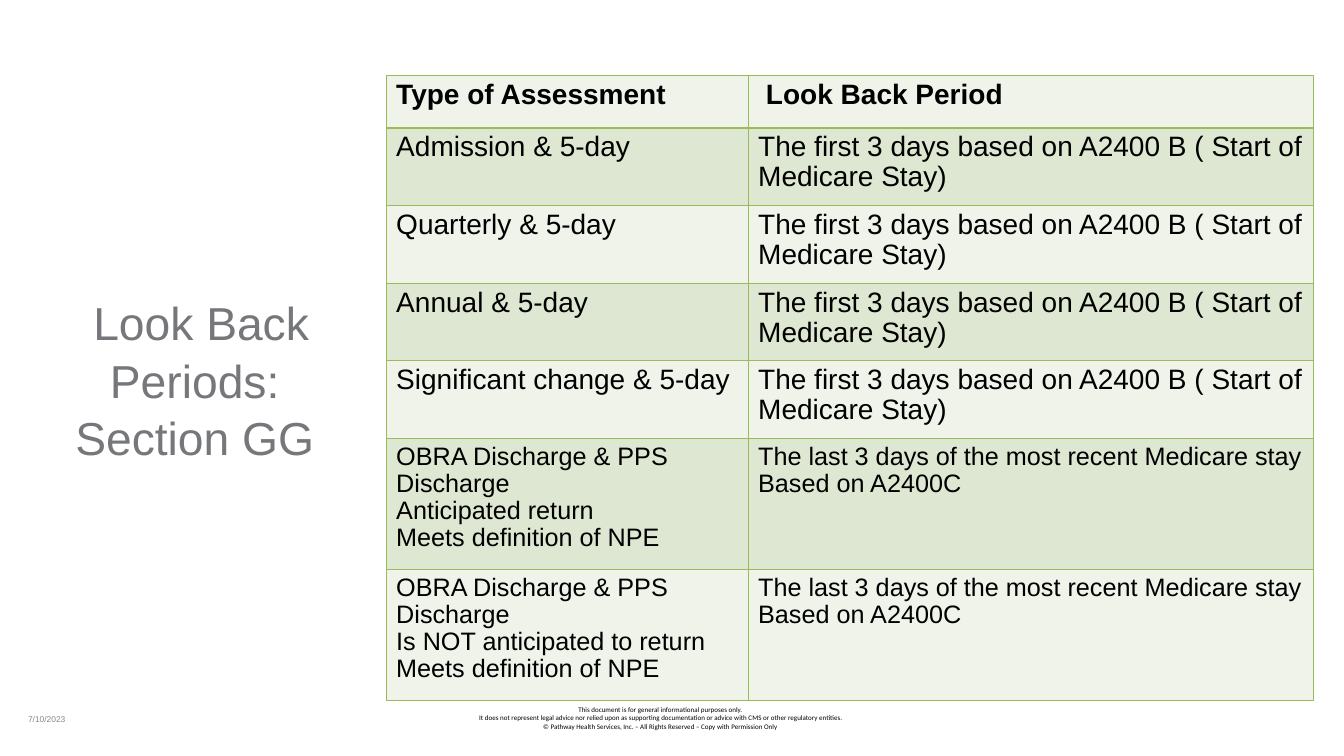
import pptx
import pptx.util
import pptx.dml.color
import pptx.enum.text
import pptx.oxml
import pptx.oxml.ns
from pptx.util import Inches

ALIGN = pptx.enum.text.PP_ALIGN
ANCHOR = pptx.enum.text.MSO_ANCHOR
EDGE = "9BBB59"
BANDS = ("EFF3EA", "DEE7D1")
START = ["The first 3 days based on A2400 B ( Start of Medicare Stay)"]
END = ["The last 3 days of the most recent Medicare stay", "Based on A2400C"]
LEAVE = "OBRA Discharge & PPS Discharge"
NPE = "Meets definition of NPE"
ROWS = [
    (0.52, 20, ["Type of Assessment"], [" Look Back Period"]),
    (0.77, 20, ["Admission & 5-day"], START),
    (0.77, 20, ["Quarterly & 5-day"], START),
    (0.77, 20, ["Annual & 5-day"], START),
    (0.77, 20, ["Significant change & 5-day"], START),
    (1.3, 18, [LEAVE, "Anticipated return", NPE], END),
    (1.3, 18, [LEAVE, "Is NOT anticipated to return", NPE], END),
]
NOTICE = [
    "This document is for general informational purposes only. ",
    "It does not represent legal advice nor relied upon as supporting "
    "documentation or advice with CMS or other regulatory entities.",
    "© Pathway Health Services, Inc. – All Rights Reserved – "
    "Copy with Permission Only ",
]


def color(code):
    """Turn a hex string into a colour."""
    return pptx.dml.color.RGBColor.from_string(code)


def write(frame, lines, size, ink, font="Arial", bold=False,
          align=ALIGN.LEFT, space=1.0):
    """Fill a text frame with one paragraph per line."""
    frame.word_wrap = True
    for i, line in enumerate(lines):
        para = frame.add_paragraph() if i else frame.paragraphs[0]
        para.alignment = align
        para.line_spacing = space
        run = para.add_run()
        run.text = line
        run.font.size = pptx.util.Pt(size)
        run.font.name = font
        run.font.bold = bold
        run.font.color.rgb = color(ink)


def border(cell):
    """Draw a thin line on all four sides of a cell."""
    props = cell._tc.get_or_add_tcPr()
    space = pptx.oxml.ns.nsdecls("a")
    for i, side in enumerate(("lnL", "lnR", "lnT", "lnB")):
        props.insert(i, pptx.oxml.parse_xml(
            f'<a:{side} {space} w="12700"><a:solidFill>'
            f'<a:srgbClr val="{EDGE}"/></a:solidFill></a:{side}>'))


def heading(slide, box):
    """Place the slide title in the box."""
    title = slide.shapes.title
    title.left, title.top, title.width, title.height = map(Inches, box)
    frame = title.text_frame
    frame.auto_size = pptx.enum.text.MSO_AUTO_SIZE.NONE
    frame.vertical_anchor = ANCHOR.MIDDLE
    write(frame, ["Look Back Periods: ", "Section GG "], 33, "75777B",
          align=ALIGN.CENTER, space=1.04)


def periods(slide, box):
    """Place the table of look back periods in the box."""
    table = slide.shapes.add_table(len(ROWS), 2, *map(Inches, box)).table
    first = 3.59
    table.columns[0].width = Inches(first)
    table.columns[1].width = Inches(box[2] - first)
    for i, (height, size, *texts) in enumerate(ROWS):
        table.rows[i].height = Inches(height)
        for cell, lines in zip(table.rows[i].cells, texts):
            cell.fill.solid()
            cell.fill.fore_color.rgb = color(BANDS[i % 2])
            border(cell)
            write(cell.text_frame, lines, size, "000000", bold=i == 0,
                  space=0.96)


def label(slide, box, lines, size, ink, anchor=ANCHOR.TOP, **style):
    """Place a small text box."""
    frame = slide.shapes.add_textbox(*map(Inches, box)).text_frame
    frame.vertical_anchor = anchor
    write(frame, lines, size, ink, **style)


def main():
    """Build and save the slide."""
    deck = pptx.Presentation()
    deck.slide_width, deck.slide_height = Inches(13.33), Inches(7.5)
    slide = deck.slides.add_slide(deck.slide_layouts[5])
    label(slide, (3.67, 6.95, 5.78, 0.35), NOTICE, 5, "000000",
          font="Calibri", align=ALIGN.CENTER)
    label(slide, (0.18, 6.93, 0.76, 0.4), ["7/10/2023"], 6, "898989",
          anchor=ANCHOR.MIDDLE)
    periods(slide, (3.83, 0.75, 9.2, sum(row[0] for row in ROWS)))
    heading(slide, (0, 3.03, 3.99, 1.45))
    deck.save("out.pptx")


if __name__ == "__main__":
    main()
